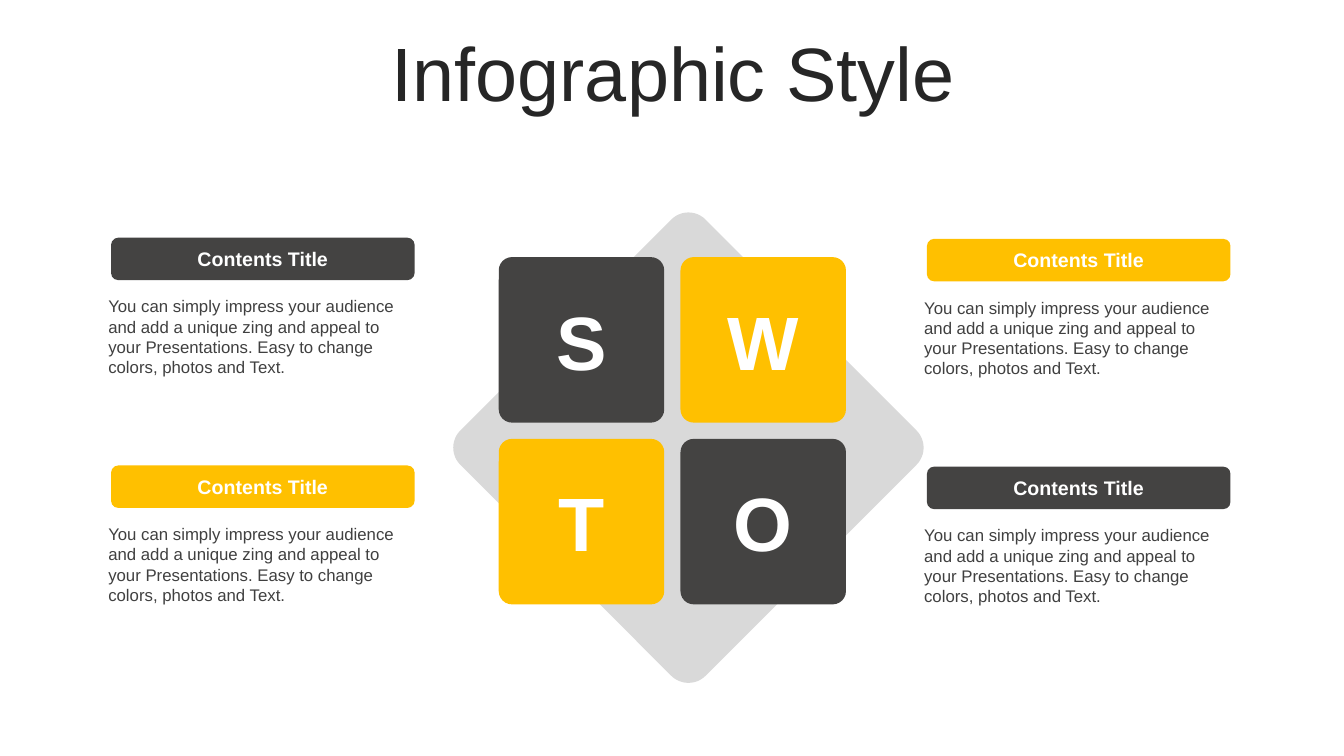
from pptx import Presentation
from pptx import util as u
from pptx.dml.color import RGBColor
from pptx.enum import shapes, text

DARK, YELLOW, GREY, WHITE = "444342", "FFC000", "D9D9D9", "FFFFFF"
BODY = ("You can simply impress your audience and add a unique zing and appeal "
        "to your Presentations. Easy to change colors, photos and Text.")
TITLE_FONT = {"size": u.Pt(54), "bold": False}
LETTER_FONT = {"size": u.Pt(54), "bold": True}
HEADING_FONT = {"size": u.Pt(14), "bold": True}
BODY_FONT = {"size": u.Pt(12), "bold": False}
FRAME = {"word_wrap": True, "auto_size": text.MSO_AUTO_SIZE.NONE,
         "vertical_anchor": text.MSO_ANCHOR.MIDDLE}


def rgb(value):
    """Return the colour for a hex string."""
    return RGBColor.from_string(value)


def set_attrs(obj, values):
    """Set each named attribute on an object."""
    for name, value in values.items():
        setattr(obj, name, value)


def write(sp, words, font, colour, align=text.PP_ALIGN.CENTER, **frame):
    """Put one formatted paragraph in a shape."""
    tf = sp.text_frame
    set_attrs(tf, {**FRAME, **frame})
    p = tf.paragraphs[0]
    p.alignment = align
    r = p.add_run()
    r.text = words
    set_attrs(r.font, {"name": "Arial", **font})
    r.font.color.rgb = rgb(colour)
    return p


def add_block(s, x, y, w, h, colour, corner):
    """Add a plain rounded rectangle, measured in centimetres."""
    sp = s.shapes.add_shape(shapes.MSO_SHAPE.ROUNDED_RECTANGLE,
                            u.Cm(x), u.Cm(y), u.Cm(w), u.Cm(h))
    sp.adjustments[0] = corner
    sp.shadow.inherit = False
    sp.fill.solid()
    sp.fill.fore_color.rgb = rgb(colour)
    sp.line.fill.background()
    return sp


def add_title(s, x, y, w, h):
    """Place and format the slide title."""
    sp = s.shapes.title
    set_attrs(sp, {"left": u.Cm(x), "top": u.Cm(y),
                   "width": u.Cm(w), "height": u.Cm(h)})
    p = write(sp, "Infographic Style", TITLE_FONT, "262626")
    set_attrs(p, {"line_spacing": 0.9, "space_before": u.Pt(10)})


def add_swot(s, x, y, size):
    """Draw the diamond and the four letter tiles inside a square box."""
    diamond = add_block(s, x, y, size, size, GREY, 0.07)
    diamond.rotation = 315
    tile, pitch = 4.17, 4.58
    for i, (letter, colour) in enumerate(
            zip("SWTO", (DARK, YELLOW, YELLOW, DARK))):
        row, col = divmod(i, 2)
        sp = add_block(s, x - 0.41 + col * pitch, y - 0.43 + row * pitch,
                       tile, tile, colour, 0.08)
        write(sp, letter, LETTER_FONT, WHITE, margin_left=0, margin_right=0,
              margin_top=0, margin_bottom=0)


def add_card(s, x, y, w, colour):
    """Draw a heading bar with its description below."""
    bar = add_block(s, x + 0.32, y, w - 0.63, 1.07, colour, 0.17)
    write(bar, "Contents Title", HEADING_FONT, WHITE)
    sp = s.shapes.add_textbox(u.Cm(x), u.Cm(y + 1.35), u.Cm(w), u.Cm(2.31))
    write(sp, BODY, BODY_FONT, "404040", text.PP_ALIGN.LEFT,
          vertical_anchor=text.MSO_ANCHOR.TOP)


def main():
    """Build and save the slide."""
    prs = Presentation()
    set_attrs(prs, {"slide_width": u.Cm(33.87), "slide_height": u.Cm(19.05)})
    s = prs.slides.add_slide(prs.slide_layouts[5])
    add_title(s, 0.89, 0.94, 32.16, 2.01)
    add_swot(s, 12.98, 6.91, 8.74)
    for x, y, colours in ((2.48, 5.99, (DARK, YELLOW)),
                          (23.04, 6.02, (YELLOW, DARK))):
        for row, colour in enumerate(colours):
            add_card(s, x, y + row * 5.74, 8.28, colour)
    prs.save("out.pptx")


if __name__ == "__main__":
    main()
